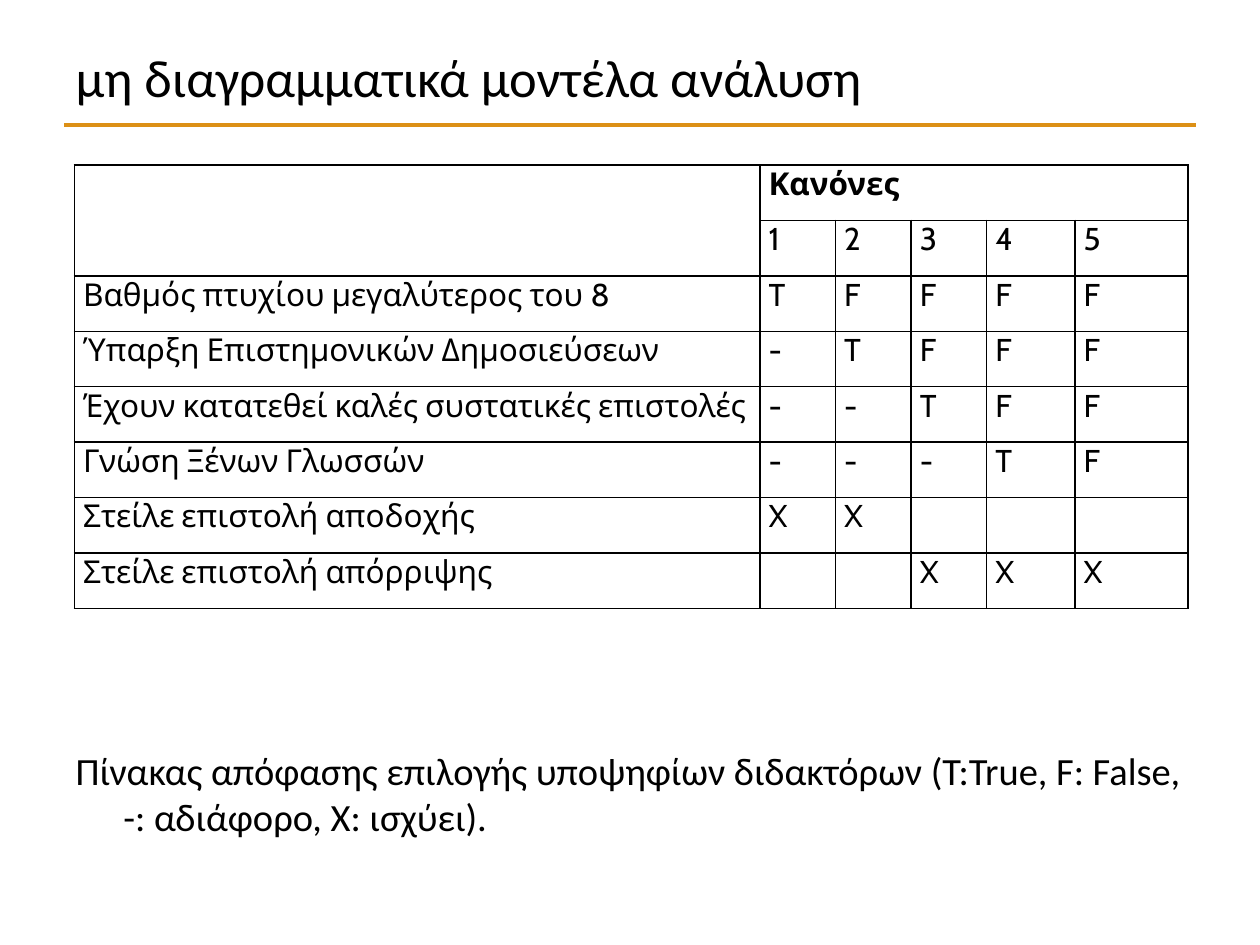
from dataclasses import dataclass

from lxml.etree import SubElement
from pptx import Presentation
from pptx.dml.color import RGBColor
from pptx.enum.shapes import MSO_CONNECTOR as Connector
from pptx.enum.text import MSO_ANCHOR as Anchor, MSO_AUTO_SIZE as AutoSize, PP_ALIGN as Align
from pptx.oxml.ns import qn
from pptx.util import Inches, Pt


@dataclass(frozen=True)
class Theme:
    """Colours, fonts and type sizes of the slide."""
    ink: RGBColor = RGBColor(0x00, 0x00, 0x00)
    accent: RGBColor = RGBColor(0xDC, 0x90, 0x16)
    text_font: str = "Calibri"
    table_font: str = "Cabin"
    title_size: Pt = Pt(30)
    caption_size: Pt = Pt(22)
    table_size: Pt = Pt(18)
    rule_width: Pt = Pt(2.5)
    border_width: Pt = Pt(1)


THEME = Theme()
TITLE = "μη διαγραμματικά μοντέλα ανάλυση"
CAPTION = ("Πίνακας απόφασης επιλογής υποψηφίων διδακτόρων "
           "(T:True, F: False, -: αδιάφορο, X: ισχύει).")
RULES_HEADING = "Κανόνες"
DECISIONS = [
    ("", "12345"),
    ("Βαθμός πτυχίου μεγαλύτερος του 8", "TFFFF"),
    ("Ύπαρξη Επιστημονικών Δημοσιεύσεων", "-TFFF"),
    ("Έχουν κατατεθεί καλές συστατικές επιστολές", "--TFF"),
    ("Γνώση Ξένων Γλωσσών", "---TF"),
    ("Στείλε επιστολή αποδοχής", "XX   "),
    ("Στείλε επιστολή απόρριψης", "  XXX"),
]
COLUMN_WIDTHS = [5.44, 0.6, 0.6, 0.6, 0.7, 0.9]
ROW_HEIGHT = 0.44


def set_attributes(target, values):
    """Set each named value on the target."""
    for name, value in values.items():
        setattr(target, name, value)


def format_font(font, name, size, bold=False):
    """Give a font its face, size, weight and the ink colour."""
    set_attributes(font, {"name": name, "size": size, "bold": bold})
    font.color.rgb = THEME.ink


def fill_placeholder(shape, box, text, size, anchor):
    """Move a placeholder into its box and return its formatted paragraph."""
    set_attributes(shape, dict(zip(("left", "top", "width", "height"), map(Inches, box))))
    frame = shape.text_frame
    frame.text = text
    set_attributes(frame, {"word_wrap": True, "auto_size": AutoSize.NONE,
                           "vertical_anchor": anchor})
    paragraph = frame.paragraphs[0]
    paragraph.alignment = Align.LEFT
    format_font(paragraph.runs[0].font, THEME.text_font, size)
    return paragraph


def add_header(slide, box):
    """Place the title and the coloured rule beneath it."""
    left, top, width, height = box
    fill_placeholder(slide.shapes.title, box, TITLE, THEME.title_size, Anchor.MIDDLE)
    rule_top = Inches(top + height + 0.08)
    rule = slide.shapes.add_connector(Connector.STRAIGHT, Inches(left + 0.01), rule_top,
                                      Inches(left + width - 0.01), rule_top)
    rule.line.color.rgb = THEME.accent
    rule.line.width = THEME.rule_width
    SubElement(rule._element.spPr, qn("a:effectLst"))


def format_cell(cell):
    """Give a cell its insets, black borders and no fill."""
    set_attributes(cell, {"margin_left": Inches(0.07), "margin_right": Inches(0.07),
                          "margin_top": 0, "margin_bottom": 0})
    properties = cell._tc.get_or_add_tcPr()
    for side in ("lnL", "lnR", "lnT", "lnB"):
        border = SubElement(properties, qn(f"a:{side}"), w=str(THEME.border_width))
        fill = SubElement(border, qn("a:solidFill"))
        SubElement(fill, qn("a:srgbClr"), val=str(THEME.ink))
    cell.fill.background()


def write_cell(cell, text, bold=False):
    """Write one formatted line of text in a cell."""
    paragraph = cell.text_frame.paragraphs[0]
    paragraph.space_after = Pt(3)
    format_font(paragraph.font, THEME.table_font, THEME.table_size, bold)
    if text:
        run = paragraph.add_run()
        run.text = text
        format_font(run.font, THEME.table_font, THEME.table_size, bold)


def add_decision_table(slide, box):
    """Place the decision table with its merged heading cells."""
    rows = [("", RULES_HEADING, "", "", "", "")]
    rows += [(label, *marks) for label, marks in DECISIONS]
    table = slide.shapes.add_table(len(rows), len(COLUMN_WIDTHS), *map(Inches, box)).table
    set_attributes(table, {"first_row": False, "horz_banding": False})
    for column, width in zip(table.columns, COLUMN_WIDTHS):
        column.width = Inches(width)
    for row, texts in zip(table.rows, rows):
        row.height = Inches(ROW_HEIGHT)
        for cell, text in zip(row.cells, texts):
            format_cell(cell)
            write_cell(cell, text.strip(), bold=text == RULES_HEADING)
    table.cell(0, 0).merge(table.cell(1, 0))
    table.cell(0, 1).merge(table.cell(0, len(COLUMN_WIDTHS) - 1))


def add_caption(slide, box):
    """Place the caption with a hanging indent and no bullet."""
    paragraph = fill_placeholder(slide.placeholders[1], box, CAPTION,
                                 THEME.caption_size, Anchor.TOP)
    paragraph.space_before = Pt(4.4)
    properties = paragraph._p.get_or_add_pPr()
    properties.set("marL", str(Inches(0.38)))
    properties.set("indent", str(Inches(-0.38)))
    SubElement(properties, qn("a:buNone"))


def main():
    """Build and save the presentation."""
    presentation = Presentation()
    set_attributes(presentation, {"slide_width": Inches(10), "slide_height": Inches(7.5)})
    slide = presentation.slides.add_slide(presentation.slide_layouts[1])
    add_header(slide, (0.5, 0.3, 9, 0.61))
    add_caption(slide, (0.5, 5.88, 9, 1.02))
    add_decision_table(slide, (0.59, 1.31, sum(COLUMN_WIDTHS), ROW_HEIGHT * (len(DECISIONS) + 1)))
    presentation.save("out.pptx")


if __name__ == "__main__":
    main()
